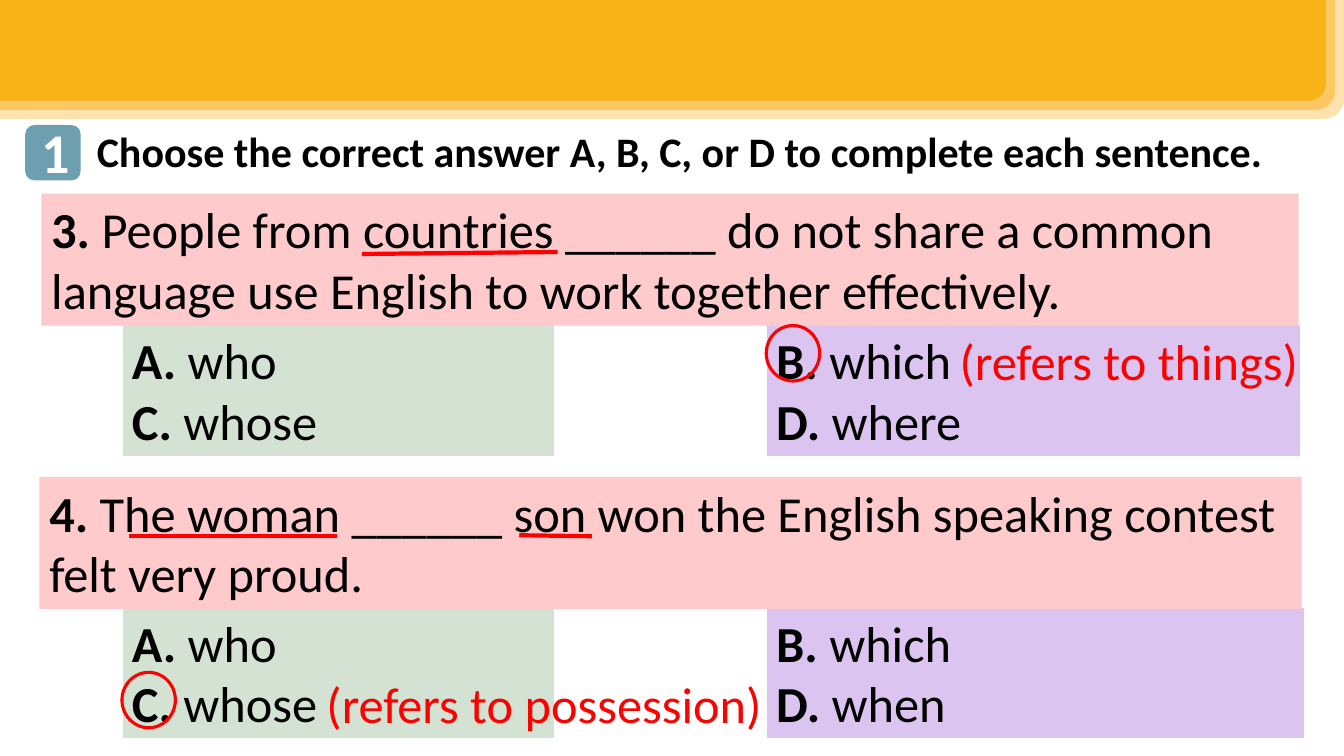
"""Build a grammar quiz slide on relative pronouns."""
from dataclasses import dataclass
from lxml import etree
from pptx import Presentation
from pptx import util as u
from pptx.dml.color import RGBColor
from pptx.enum import shapes, text
from pptx.oxml.ns import qn

Runs = list[tuple[str, bool]]
Box = tuple[float, float, float, float]


@dataclass(frozen=True)
class Theme:
    """Colours, font and type sizes."""
    font: str = "Calibri"
    ink: str = "000000"
    white: str = "FFFFFF"
    red: str = "FF0000"
    badge: str = "6D9FB1"
    pink: str = "FFCACC"
    green: str = "D4E2D4"
    lilac: str = "DBC4F0"
    bands: tuple[str, ...] = ("FEE3AF", "FBC864", "F8B417")
    head: int = 30
    body: int = 36
    mark: int = 40


@dataclass(frozen=True)
class Quiz:
    """One question with its four answers, ring and note."""
    num: str
    ask: str
    box: Box
    top: float
    wide: float
    words: tuple[str, str, str, str]
    ring: tuple[float, float]
    note: str
    spot: Box
    marks: tuple[Box, ...]


T = Theme()
QUIZ = [
    Quiz("3. ", "People from countries ______ do not share a common language "
         "use English to work together effectively.",
         (0.41, 1.92, 12.47, 1.31), 3.22, 5.3,
         ("who", "which", "whose", "where"), (7.6, 3.23),
         "(refers to things)", (9.42, 3.23, 3.68, 0.71),
         ((3.59, 2.52, 5.53, 2.5),)),
    Quiz("4. ", "The woman ______ son won the English speaking contest "
         "felt very proud.",
         (0.39, 4.73, 12.52, 1.31), 6.02, 5.34,
         ("who", "which", "whose", "when"), (1.21, 6.67),
         "(refers to possession)", (3.14, 6.63, 4.53, 0.71),
         ((1.28, 5.32, 3.34, 5.32), (5.15, 5.31, 5.87, 5.32))),
]


def rgb(code: str) -> RGBColor:
    """Turn a hex code into a colour."""
    return RGBColor.from_string(code)


def write(shape, lines: list[Runs], size: int, color: str = T.ink,
          align=text.PP_ALIGN.LEFT) -> None:
    """Fill a shape with paragraphs, run by run."""
    frame = shape.text_frame
    frame.word_wrap = True
    frame.auto_size = text.MSO_AUTO_SIZE.NONE
    frame.vertical_anchor = text.MSO_ANCHOR.TOP
    for i, runs in enumerate(lines):
        para = frame.add_paragraph() if i else frame.paragraphs[0]
        para.alignment = align
        for words, bold in runs:
            run = para.add_run()
            run.text = words
            run.font.name = T.font
            run.font.size = u.Pt(size)
            run.font.bold = bold
            run.font.color.rgb = rgb(color)


def draw(slide, kind, box: Box, fill: str = "", line: str = "",
         width: float = 1):
    """Add a preset shape with optional fill and outline."""
    shape = slide.shapes.add_shape(kind, *map(u.Inches, box))
    shape.shadow.inherit = False
    if fill:
        shape.fill.solid()
        shape.fill.fore_color.rgb = rgb(fill)
    else:
        shape.fill.background()
    if line:
        shape.line.color.rgb = rgb(line)
        shape.line.width = u.Pt(width)
    else:
        shape.line.fill.background()
    return shape


def label(slide, box: Box, runs: Runs, size: int, color: str,
          align=text.PP_ALIGN.LEFT) -> None:
    """Add a text box."""
    area = slide.shapes.add_textbox(*map(u.Inches, box))
    write(area, [runs], size, color, align)


def score(slide, ends: Box) -> None:
    """Underline words with a red stroke."""
    line = slide.shapes.add_connector(
        shapes.MSO_CONNECTOR.STRAIGHT, *map(u.Inches, ends))
    line.line.color.rgb = rgb(T.red)
    line.line.width = u.Pt(3)
    etree.SubElement(line._element.spPr, qn("a:effectLst"))


def header(slide) -> None:
    """Draw the bands, the title and the number badge."""
    kind = shapes.MSO_SHAPE
    for i, fill in enumerate(T.bands):
        gap = 0.09 * i
        band = draw(slide, kind.ROUND_1_RECTANGLE,
                    (0, 0, 13.33 - gap, 1.18 - gap), fill)
        band._element.spPr.get_or_add_xfrm().set("flipV", "1")
    title = slide.shapes.title
    title.left, title.top = u.Inches(0.86), u.Inches(1.2)
    title.width, title.height = u.Inches(12.38), u.Inches(0.61)
    write(title, [[("Choose the correct answer A, B, C, or D to complete "
                    "each sentence.", True)]], T.head)
    draw(slide, kind.ROUNDED_RECTANGLE, (0.25, 1.24, 0.55, 0.55), T.badge)
    label(slide, (0.31, 1.12, 0.43, 0.77), [("1", True)], T.mark, T.white,
          text.PP_ALIGN.CENTER)


def pose(slide, quiz: Quiz) -> None:
    """Draw one question with its answers and marks."""
    kind = shapes.MSO_SHAPE
    pairs = [[(f"{key}. ", True), (word, False)]
             for key, word in zip("ABCD", quiz.words)]
    cols = ((1.21, 4.29, T.green), (7.6, quiz.wide, T.lilac))
    for i, (left, wide, fill) in enumerate(cols):
        cell = draw(slide, kind.RECTANGLE, (left, quiz.top, wide, 1.31),
                    fill, T.white)
        write(cell, pairs[i::2], T.body)
    ask = draw(slide, kind.RECTANGLE, quiz.box, T.pink)
    write(ask, [[(quiz.num, True), (quiz.ask, False)]], T.body)
    draw(slide, kind.OVAL, (*quiz.ring, 0.53, 0.55), line=T.red, width=2.25)
    for ends in quiz.marks:
        score(slide, ends)
    label(slide, quiz.spot, [(quiz.note, False)], T.body, T.red)


def main() -> None:
    """Build and save the deck."""
    deck = Presentation()
    deck.slide_width, deck.slide_height = u.Inches(13.33), u.Inches(7.5)
    slide = deck.slides.add_slide(deck.slide_layouts[5])
    header(slide)
    for quiz in QUIZ:
        pose(slide, quiz)
    deck.save("out.pptx")


if __name__ == "__main__":
    main()
